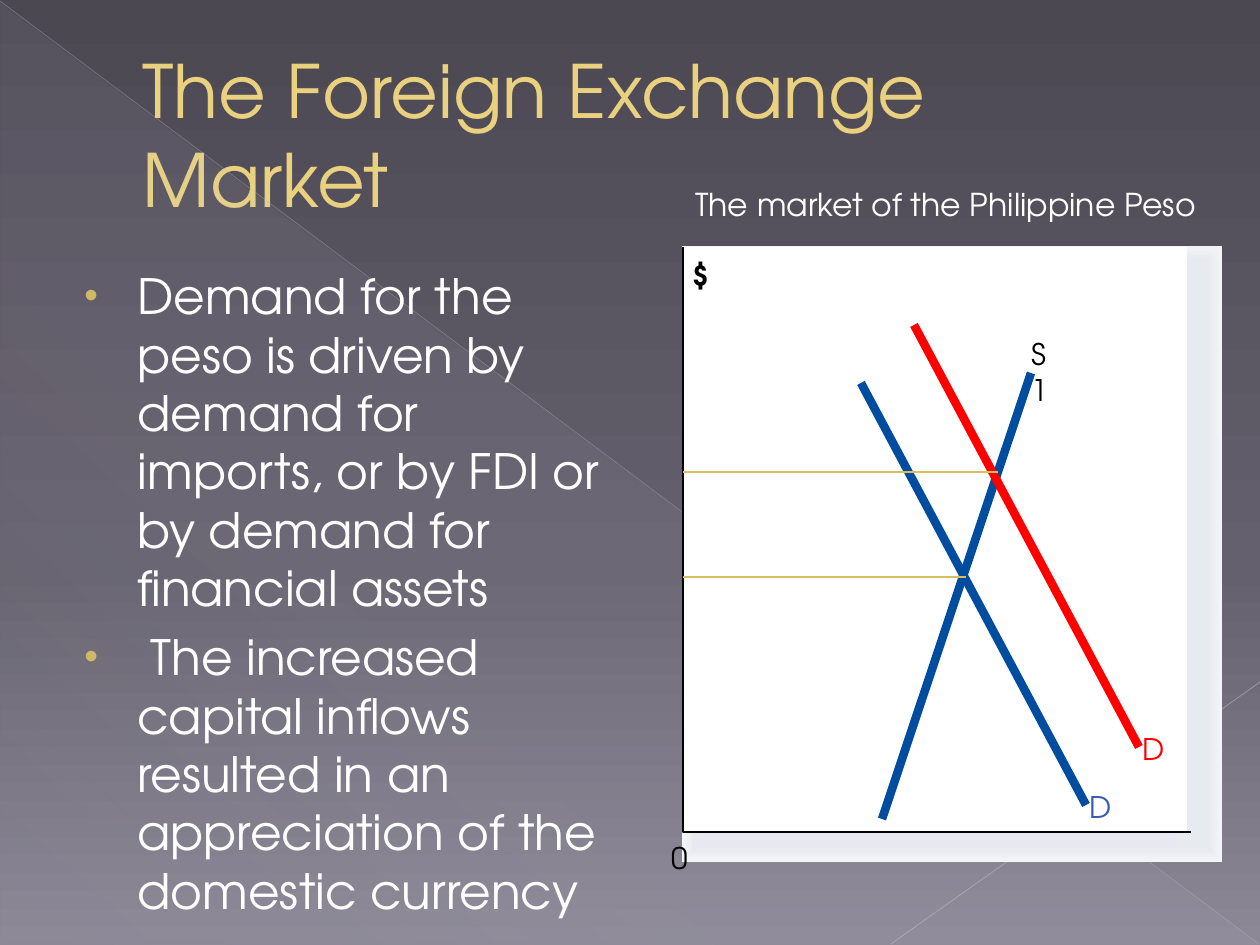
"""Build the foreign exchange market slide with its supply and demand diagram."""
from dataclasses import dataclass

from lxml.etree import SubElement
from pptx import Presentation
from pptx.dml.color import RGBColor
from pptx.enum.shapes import MSO_CONNECTOR as Connector, MSO_SHAPE as Shape
from pptx.enum.text import MSO_ANCHOR as Anchor, MSO_AUTO_SIZE as AutoSize, PP_ALIGN as Align
from pptx.oxml.ns import qn
from pptx.util import Pt


@dataclass(frozen=True)
class Theme:
    font: str = "TeX Gyre Adventor"
    title: str = "E9D17F"
    light: str = "FFFFFF"
    dark: str = "000000"
    bullet: str = "CEB966"
    blue: str = "004C9F"
    blue_label: str = "375BB0"
    red: str = "FF0000"
    guide: str = "D8BF5C"
    title_size: float = 42
    body_size: float = 27.8
    caption_size: float = 18
    label_size: float = 17
    background: tuple = ((0, "4B4852", 100), (60, "64606D", 100), (100, "8C8896", 100))
    sheen: tuple = ((0, "C9C2D1", 10), (70, "C9C2D1", 8), (100, "C9C2D1", 1))
    halo: tuple = ("F3F6F9", "F2F4F8", "F1F4F7", "F0F2F5", "EEF1F4", "EDEFF3",
                   "EBEEF2", "EAECF1", "E9EBF0", "E7EAEF", "E6E9EF")


theme = Theme()
PX = 914400 / 126


def add_text(paragraph, text, size, color, bold=False):
    run = paragraph.add_run()
    run.text = text
    run.font.name = theme.font
    run.font.size = Pt(size)
    run.font.bold = bold
    run.font.color.rgb = RGBColor.from_string(color)


def add_line(points, color, width, opacity=100):
    line = slide.shapes.add_connector(Connector.STRAIGHT, *[round(value * PX) for value in points])
    line.line.color.rgb = RGBColor.from_string(color)
    line.line.width = Pt(width)
    if opacity < 100:
        SubElement(line.element.find(".//" + qn("a:srgbClr")), qn("a:alpha"), val=str(opacity * 1000))
    SubElement(line.element.spPr, qn("a:effectLst"))


presentation = Presentation()
presentation.slide_width = round(1260 * PX)
presentation.slide_height = round(945 * PX)
slide = presentation.slides.add_slide(presentation.slide_layouts[5])

sheen = slide.shapes.add_shape(Shape.RIGHT_TRIANGLE, *[round(value * PX) for value in (1, 3, 1258, 942)])
sheen.shadow.inherit = False
sheen.line.fill.background()
for fill, root, stops, angle in (
    (slide.background.fill, slide.element, theme.background, 90),
    (sheen.fill, sheen.element, theme.sheen, 133),
):
    fill.gradient()
    fill.gradient_angle = 360 - angle
    stop_list = root.find(".//" + qn("a:gsLst"))
    for stop in list(stop_list):
        stop_list.remove(stop)
    for position, color, opacity in stops:
        stop = SubElement(stop_list, qn("a:gs"), pos=str(position * 1000))
        color_element = SubElement(stop, qn("a:srgbClr"), val=color)
        SubElement(color_element, qn("a:alpha"), val=str(opacity * 1000))

add_line((0, 1, 1259, 944), "C0BFC2", 0.39, 35)
add_line((1260, 682, 891, 944), "C7C6C8", 0.47, 45)

title = slide.shapes.title
title.left, title.top, title.width, title.height = [round(value * PX) for value in (63, 37, 1134, 193)]
title.text_frame.vertical_anchor = Anchor.MIDDLE
title.text_frame.auto_size = AutoSize.NONE
heading = title.text_frame.paragraphs[0]
heading.alignment = Align.LEFT
heading._p.get_or_add_pPr().set("marL", str(round(67 * PX)))
add_text(heading, "The Foreign Exchange Market", theme.title_size, theme.title)

body = slide.shapes.add_textbox(*[round(value * PX) for value in (63, 260, 567, 630)])
body.text_frame.word_wrap = True
for index, text in enumerate((
    "Demand for the peso is driven by demand for imports, or by FDI or by demand for financial assets",
    " The increased capital inflows resulted in an appreciation of the domestic currency",
)):
    paragraph = body.text_frame.add_paragraph() if index else body.text_frame.paragraphs[0]
    paragraph.space_before = Pt(6)
    properties = paragraph._p.get_or_add_pPr()
    properties.set("marL", str(round(62 * PX)))
    properties.set("indent", str(round(-53 * PX)))
    SubElement(SubElement(properties, qn("a:buClr")), qn("a:srgbClr"), val=theme.bullet)
    SubElement(properties, qn("a:buSzPct"), val="80000")
    SubElement(properties, qn("a:buFont"), typeface="Arial")
    SubElement(properties, qn("a:buChar"), char="•")
    add_text(paragraph, text, theme.body_size, theme.light)

panels = [((697, 261, 510, 586), color, 17.63 - 1.6 * index) for index, color in enumerate(theme.halo)]
panels[-1] = ((693, 261, 481, 586), theme.halo[-1], 1.63)
panels.append(((684, 247, 503, 586), theme.light, 0))
for bounds, color, width in panels:
    panel = slide.shapes.add_shape(Shape.RECTANGLE, *[round(value * PX) for value in bounds])
    panel.shadow.inherit = False
    panel.fill.solid()
    panel.fill.fore_color.rgb = RGBColor.from_string(color)
    if width:
        panel.line.color.rgb = RGBColor.from_string(color)
        panel.line.width = Pt(width)
        SubElement(panel.element.spPr.find(qn("a:ln")), qn("a:miter"), lim="800000")
    else:
        panel.line.fill.background()

builder = slide.shapes.build_freeform(683, 247, scale=PX)
builder.add_line_segments([(683, 832), (1191, 832)], close=False)
axes = builder.convert_to_shape()
axes.shadow.inherit = False
axes.fill.background()
axes.line.color.rgb = RGBColor.from_string(theme.dark)
axes.line.width = Pt(1.63)

for points, color in (
    ((882, 819, 1031, 373), theme.blue),
    ((861, 383, 1086, 805), theme.blue),
    ((914, 325, 1139, 747), theme.red),
):
    add_line(points, color, 4.88)

for text, bounds, color, bold, wrap in (
    ("0", (672, 840, 25, 37), theme.dark, False, True),
    ("$", (693, 258, 88, 37), theme.dark, True, True),
    ("S1", (1032, 336, 26, 37), theme.dark, False, True),
    ("D", (1090, 789, 23, 37), theme.blue_label, False, False),
    ("D", (1143, 731, 23, 37), theme.red, False, False),
):
    label = slide.shapes.add_textbox(*[round(value * PX) for value in bounds])
    frame = label.text_frame
    frame.margin_left = frame.margin_top = frame.margin_right = frame.margin_bottom = 0
    frame.word_wrap = wrap
    frame.auto_size = AutoSize.SHAPE_TO_FIT_TEXT
    add_text(frame.paragraphs[0], text, theme.label_size, color, bold)

for right, level in ((998, 472), (966, 577)):
    add_line((683, level, right, level), theme.guide, 0.75)

caption = slide.shapes.add_textbox(*[round(value * PX) for value in (683, 179, 533, 50)])
caption.text_frame.word_wrap = False
caption.text_frame.auto_size = AutoSize.SHAPE_TO_FIT_TEXT
add_text(caption.text_frame.paragraphs[0], "The market of the Philippine Peso", theme.caption_size, theme.light)

presentation.save("out.pptx")
